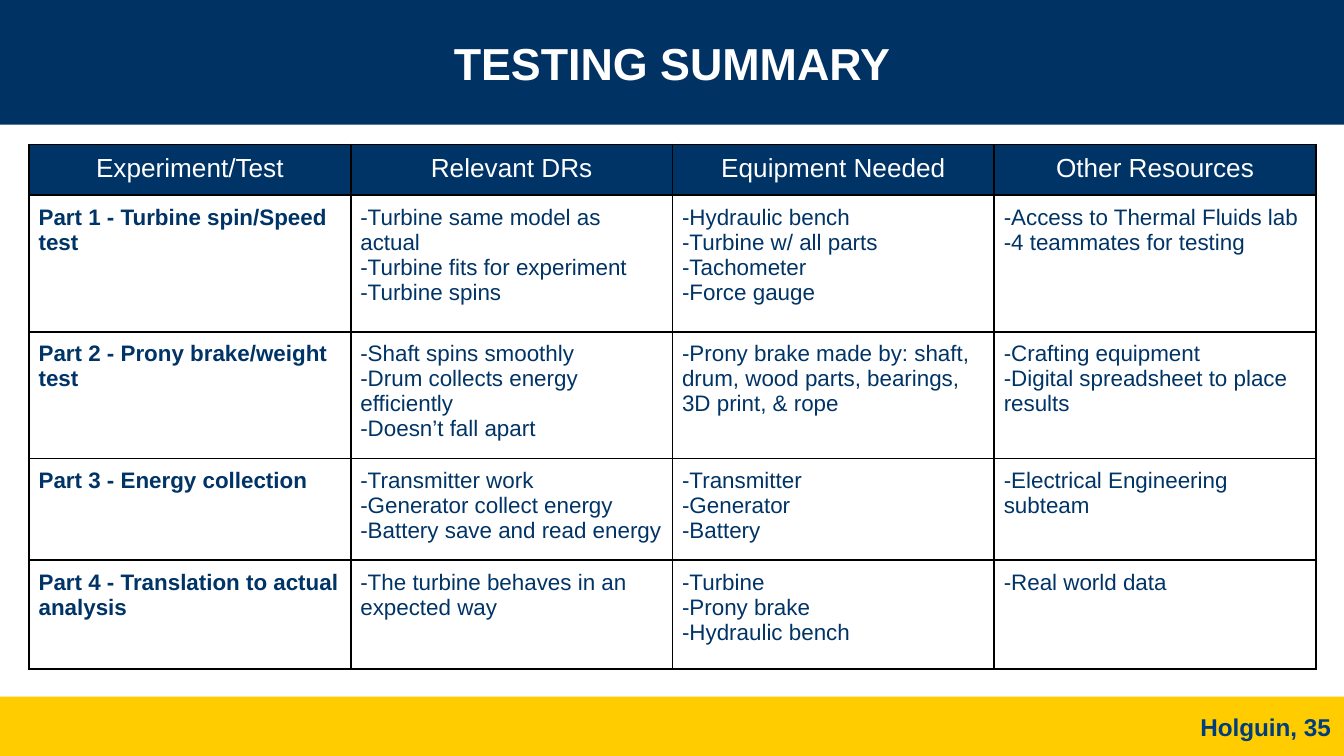
from lxml.etree import SubElement
from pptx import Presentation
from pptx.dml.color import RGBColor
from pptx.enum.shapes import MSO_SHAPE
from pptx.enum.text import MSO_ANCHOR, MSO_AUTO_SIZE, PP_ALIGN
from pptx.oxml.ns import qn
from pptx.util import Cm, Pt

COLORS = {
    "navy": "003264",
    "table": "003466",
    "footer": "003D7C",
    "gold": "FFCC00",
    "white": "FFFFFF",
    "black": "000000",
}
WIDTH, HEIGHT = 25.4, 14.29
HEADER_H, FOOTER_H = 2.36, 1.12
COL_W = 6.08
ROW_HEIGHTS = [0.96, 2.58, 2.4, 1.92, 2.06]
HEADINGS = ["Experiment/Test", "Relevant DRs", "Equipment Needed", "Other Resources"]
TESTS = [
    [
        ["Part 1 - Turbine spin/Speed test"],
        ["-Turbine same model as actual", "-Turbine fits for experiment", "-Turbine spins"],
        ["-Hydraulic bench", "-Turbine w/ all parts", "-Tachometer", "-Force gauge"],
        ["-Access to Thermal Fluids lab", "-4 teammates for testing"],
    ],
    [
        ["Part 2 - Prony brake/weight test"],
        ["-Shaft spins smoothly", "-Drum collects energy efficiently", "-Doesn’t fall apart"],
        ["-Prony brake made by: shaft, drum, wood parts, bearings, 3D print, & rope"],
        ["-Crafting equipment", "-Digital spreadsheet to place results"],
    ],
    [
        ["Part 3 - Energy collection"],
        ["-Transmitter work", "-Generator collect energy", "-Battery save and read energy"],
        ["-Transmitter", "-Generator", "-Battery"],
        ["-Electrical Engineering subteam"],
    ],
    [
        ["Part 4 - Translation to actual analysis"],
        ["-The turbine behaves in an expected way"],
        ["-Turbine", "-Prony brake", "-Hydraulic bench"],
        ["-Real world data"],
    ],
]


def rgb(name):
    return RGBColor.from_string(COLORS[name])


def write(tf, lines, size, color, bold=False, align=PP_ALIGN.LEFT):
    tf.word_wrap = True
    for i, line in enumerate(lines):
        p = tf.add_paragraph() if i else tf.paragraphs[0]
        p.alignment = align
        r = p.add_run()
        r.text = line
        r.font.name = "Arial"
        r.font.size = Pt(size)
        r.font.bold = bold
        r.font.color.rgb = rgb(color)


def add_band(s, top, height, color):
    sp = s.shapes.add_shape(MSO_SHAPE.RECTANGLE, 0, Cm(top), Cm(WIDTH), Cm(height))
    sp.shadow.inherit = False
    sp.fill.solid()
    sp.fill.fore_color.rgb = rgb(color)
    sp.line.fill.background()
    s.shapes.title.element.addprevious(sp.element)


def set_title(s, text):
    sp = s.shapes.title
    sp.left, sp.top, sp.width, sp.height = Cm(1.07), 0, Cm(23.26), Cm(HEADER_H)
    tf = sp.text_frame
    tf.auto_size = MSO_AUTO_SIZE.NONE
    tf.vertical_anchor = MSO_ANCHOR.MIDDLE
    write(tf, [text], 24, "white", True, PP_ALIGN.CENTER)


def add_footer(s, text):
    width = 7.32
    sp = s.shapes.add_textbox(
        Cm(WIDTH - width), Cm(HEIGHT - FOOTER_H), Cm(width), Cm(FOOTER_H))
    sp.text_frame.vertical_anchor = MSO_ANCHOR.MIDDLE
    write(sp.text_frame, [text], 13, "footer", True, PP_ALIGN.RIGHT)


def add_borders(cell):
    tc_pr = cell._tc.get_or_add_tcPr()
    for side in ("a:lnL", "a:lnR", "a:lnT", "a:lnB"):
        ln = SubElement(tc_pr, qn(side), w=str(Pt(1)))
        fill = SubElement(ln, qn("a:solidFill"))
        SubElement(fill, qn("a:srgbClr"), val=COLORS["black"])


def fill_cell(cell, lines, fill, **style):
    cell.margin_left = cell.margin_right = Cm(0.18)
    cell.margin_top = cell.margin_bottom = Cm(0.18)
    add_borders(cell)
    cell.fill.solid()
    cell.fill.fore_color.rgb = rgb(fill)
    write(cell.text_frame, lines, **style)


def add_test_table(s):
    cols = len(HEADINGS)
    table = s.shapes.add_table(
        len(ROW_HEIGHTS), cols, Cm(0.55), Cm(2.73),
        Cm(COL_W * cols), Cm(sum(ROW_HEIGHTS))).table
    for col in table.columns:
        col.width = Cm(COL_W)
    for row, height in zip(table.rows, ROW_HEIGHTS):
        row.height = Cm(height)
    for c, heading in enumerate(HEADINGS):
        fill_cell(table.cell(0, c), [heading], "table",
                  size=14, color="white", align=PP_ALIGN.CENTER)
    for r, test in enumerate(TESTS, 1):
        for c, lines in enumerate(test):
            fill_cell(table.cell(r, c), lines, "white",
                      size=12, color="table", bold=c == 0)


def main():
    prs = Presentation()
    prs.slide_width, prs.slide_height = Cm(WIDTH), Cm(HEIGHT)
    s = prs.slides.add_slide(prs.slide_layouts[5])
    add_band(s, HEIGHT - FOOTER_H, FOOTER_H, "gold")
    add_band(s, 0, HEADER_H, "navy")
    set_title(s, "TESTING SUMMARY")
    add_footer(s, "Holguin, 35")
    add_test_table(s)
    prs.save("out.pptx")


if __name__ == "__main__":
    main()
